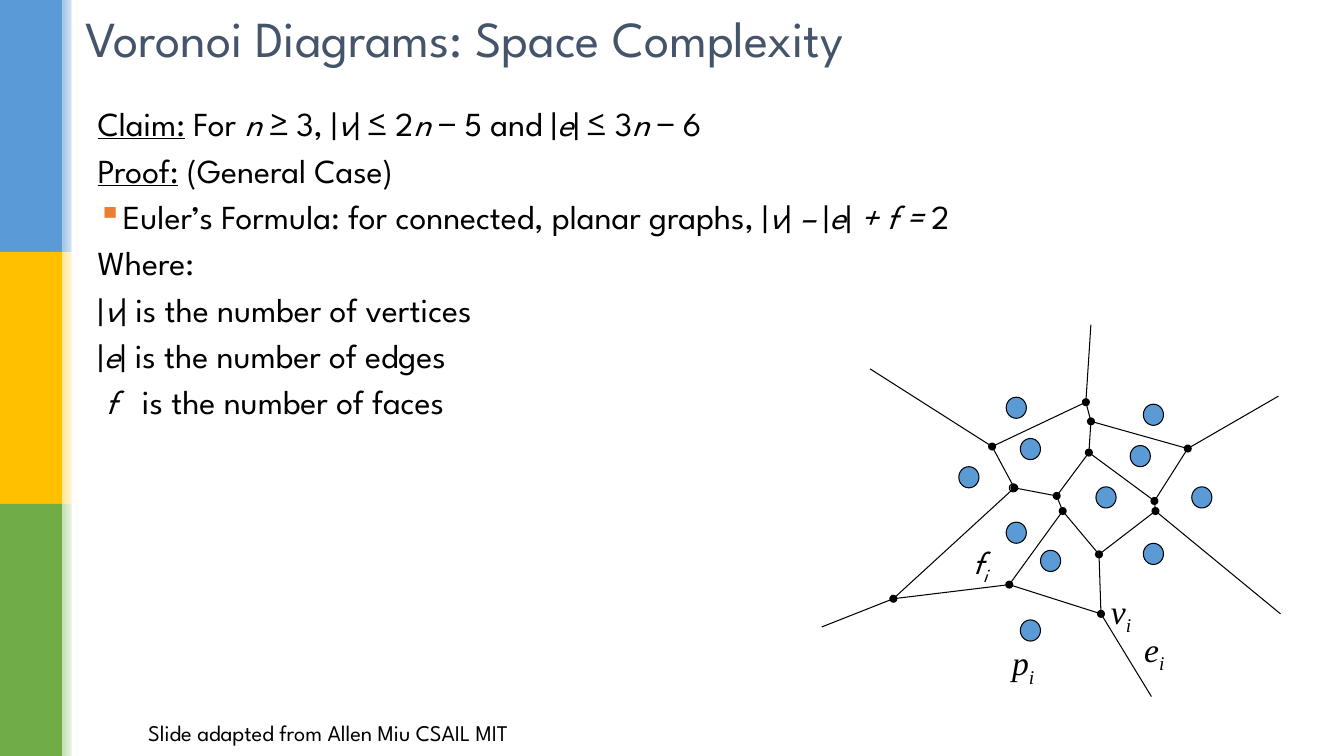
import lxml.etree
import pptx
import pptx.dml.color
import pptx.enum.shapes
import pptx.enum.text
import pptx.oxml.ns
import pptx.util

RGB = pptx.dml.color.RGBColor
BLACK = RGB(0x00, 0x00, 0x00)
WHITE = RGB(0xFF, 0xFF, 0xFF)
SLATE = RGB(0x44, 0x54, 0x6A)
ORANGE = RGB(0xED, 0x7D, 0x31)
BLUE = RGB(0x5B, 0x9B, 0xD5)
GOLD = RGB(0xFF, 0xC0, 0x00)
GREEN = RGB(0x70, 0xAD, 0x47)
PALE_BLUE = RGB(0x9D, 0xC3, 0xE6)
PALE_GOLD = RGB(0xFF, 0xE6, 0x99)
PALE_GREEN = RGB(0xC5, 0xE0, 0xB4)

SANS = "League Spartan"
SERIF = "Times New Roman"
SHAPE = pptx.enum.shapes.MSO_SHAPE
MIDDLE = pptx.enum.text.MSO_ANCHOR.MIDDLE
CENTER = pptx.enum.text.PP_ALIGN.CENTER
EMU_PER_PX = 9144


def px(length):
    return pptx.util.Emu(length * EMU_PER_PX)


def add_xml(parent, tag, **attributes):
    return lxml.etree.SubElement(parent, pptx.oxml.ns.qn(tag), attributes)


class VoronoiSlide:
    def __init__(self, deck):
        self.shapes = deck.slides.add_slide(deck.slide_layouts[6]).shapes

    def preset(self, kind, left, top, width, height, fill=None, line=None, fade=None):
        shape = self.shapes.add_shape(kind, px(left), px(top), px(width), px(height))
        shape.shadow.inherit = False
        if fade is not None:
            shape.fill.gradient()
            shape.fill.gradient_angle = 0
            for stop, color in zip(shape.fill.gradient_stops, (fill, fade)):
                stop.color.rgb = color
        elif fill is not None:
            shape.fill.solid()
            shape.fill.fore_color.rgb = fill
        else:
            shape.fill.background()
        if line is None:
            shape.line.fill.background()
        else:
            shape.line.color.rgb = line
            shape.line.width = pptx.util.Pt(0.75)

    def edge(self, start, end):
        straight = pptx.enum.shapes.MSO_CONNECTOR.STRAIGHT
        edge = self.shapes.add_connector(straight, *map(px, start + end))
        edge.line.color.rgb = BLACK
        edge.line.width = pptx.util.Pt(0.75)
        add_xml(edge._element.spPr, "a:effectLst")

    def frame(self, left, top, width, height, anchor=None):
        box = self.shapes.add_textbox(px(left), px(top), px(width), px(height))
        box.text_frame.word_wrap = True
        box.text_frame.vertical_anchor = anchor
        return box.text_frame

    def style(self, paragraph, size, face=SANS, color=BLACK):
        paragraph.font.size = pptx.util.Pt(size)
        paragraph.font.name = face
        paragraph.font.color.rgb = color

    def line_of_text(self, text, place, size, color=BLACK, align=None):
        paragraph = self.frame(*place, anchor=MIDDLE).paragraphs[0]
        paragraph.text = text
        paragraph.alignment = align
        self.style(paragraph, size, color=color)

    def indexed_label(self, symbol, left, top, width, size=24, face=SERIF):
        frame = self.frame(left, top, width, 50)
        frame.word_wrap = False
        frame.auto_size = pptx.enum.text.MSO_AUTO_SIZE.SHAPE_TO_FIT_TEXT
        paragraph = frame.paragraphs[0]
        paragraph.add_run().text = symbol
        index = paragraph.add_run()
        index.text = "i"
        index._r.get_or_add_rPr().set("baseline", "-25000")
        self.style(paragraph, size, face)
        paragraph.font.italic = True

    def argument(self, place, steps):
        frame = self.frame(*place)
        for number, (heading, text, bullet, margin, hang) in enumerate(steps):
            paragraph = frame.add_paragraph() if number else frame.paragraphs[0]
            properties = paragraph._p.get_or_add_pPr()
            properties.set("marL", str(px(margin)))
            properties.set("indent", str(-px(hang)))
            if bullet:
                bullet_color = add_xml(properties, "a:buClr")
                add_xml(bullet_color, "a:srgbClr", val=str(ORANGE))
                add_xml(properties, "a:buChar", char=bullet)
            paragraph.line_spacing = 0.9
            if number:
                paragraph.space_before = pptx.util.Pt(7.2)
            self.style(paragraph, 24)
            if heading:
                run = paragraph.add_run()
                run.text = heading
                run.font.underline = True
            for position, part in enumerate(text.split("*")):
                if part:
                    run = paragraph.add_run()
                    run.text = part
                    if position % 2:
                        run.font.italic = True


BANDS = [(BLUE, PALE_BLUE), (GOLD, PALE_GOLD), (GREEN, PALE_GREEN)]

VERTICES = {
    "south": (1092, 609), "southwest": (1001, 580), "far_west": (886, 594),
    "west": (1006, 484), "center_top": (1048, 492), "center_low": (1054, 507),
    "southeast": (1090, 550), "east_low": (1146, 507), "east_top": (1145, 497),
    "inner_north": (1080, 449), "north_low": (1082, 418), "north_top": (1077, 399),
    "northwest": (984, 443), "northeast": (1178, 445),
}
EDGES = [
    ("north_low", "north_top"), ("center_top", "center_low"),
    ("center_top", "inner_north"), ("southeast", "east_low"),
    ("east_low", "east_top"), ("northwest", "west"), ("west", "far_west"),
    ("far_west", "southwest"), ("southwest", "center_low"), ("west", "center_top"),
    ("inner_north", "east_top"), ("center_low", "southeast"),
    ("southwest", "south"), ("south", "southeast"), ("inner_north", "north_low"),
    ("northwest", "north_top"), ("north_low", "northeast"),
    ("east_top", "northeast"),
]
RAYS = {
    "northwest": (863, 366), "far_west": (815, 622), "south": (1142, 691),
    "east_low": (1270, 609), "northeast": (1268, 393), "north_top": (1082, 322),
}
SITES = [
    (1012, 615), (1032, 546), (1087, 483), (1134, 539), (1182, 483), (1121, 442),
    (1134, 401), (998, 518), (951, 463), (1012, 435), (998, 394),
]
STEPS = [
    ("Claim:", " For *n *≥ 3, |*v*| ≤ 2*n* − 5 and |*e*| ≤ 3*n* − 6", None, 25, 25),
    ("Proof:", " (General Case)", None, 25, 25),
    ("", "Euler’s Formula: for connected, planar graphs, "
     "|*v*|* – *|*e*|* + f = *2", "▪", 25, 25),
    ("", "Where:", None, 25, 25),
    ("", "|*v*| is the number of vertices", None, 25, 25),
    ("", "|*e*| is the number of edges", None, 25, 25),
    ("", "*f*\tis the number of faces", None, 44, 36),
]


def main():
    deck = pptx.Presentation()
    deck.slide_width, deck.slide_height = px(1333), px(750)
    slide = VoronoiSlide(deck)

    for row, (solid, pale) in enumerate(BANDS):
        slide.preset(SHAPE.RECTANGLE, 0, 250 * row, 62, 250, solid)
        slide.preset(SHAPE.RECTANGLE, 62, 250 * row, 16, 250, pale, fade=WHITE)
    slide.preset(SHAPE.RECTANGLE, 71, 0, 5, 750, WHITE)

    slide.line_of_text("Voronoi Diagrams: Space Complexity",
                       (75, 0, 1131, 75), 36, SLATE)
    slide.line_of_text("Slide adapted from Allen Miu CSAIL MIT",
                       (75, 703, 501, 47), 16, align=CENTER)

    for start, end in EDGES:
        slide.edge(VERTICES[start], VERTICES[end])
    for start, end in RAYS.items():
        slide.edge(VERTICES[start], end)
    for x, y in VERTICES.values():
        slide.preset(SHAPE.OVAL, x - 4, y - 4, 8, 8, BLACK)
    for left, top in SITES:
        slide.preset(SHAPE.OVAL, left, top, 20, 21, BLUE, BLACK)
    slide.preset(SHAPE.OVAL, 1001, 480, 8, 8, line=BLACK)

    slide.indexed_label("e", 1125, 619, 41)
    slide.indexed_label("v", 1092, 581, 41)
    slide.indexed_label("p", 994, 632, 43)
    slide.argument((87, 102, 1183, 496), STEPS)
    slide.indexed_label("f", 955, 533, 40, 23, SANS)

    deck.save("out.pptx")


if __name__ == "__main__":
    main()
